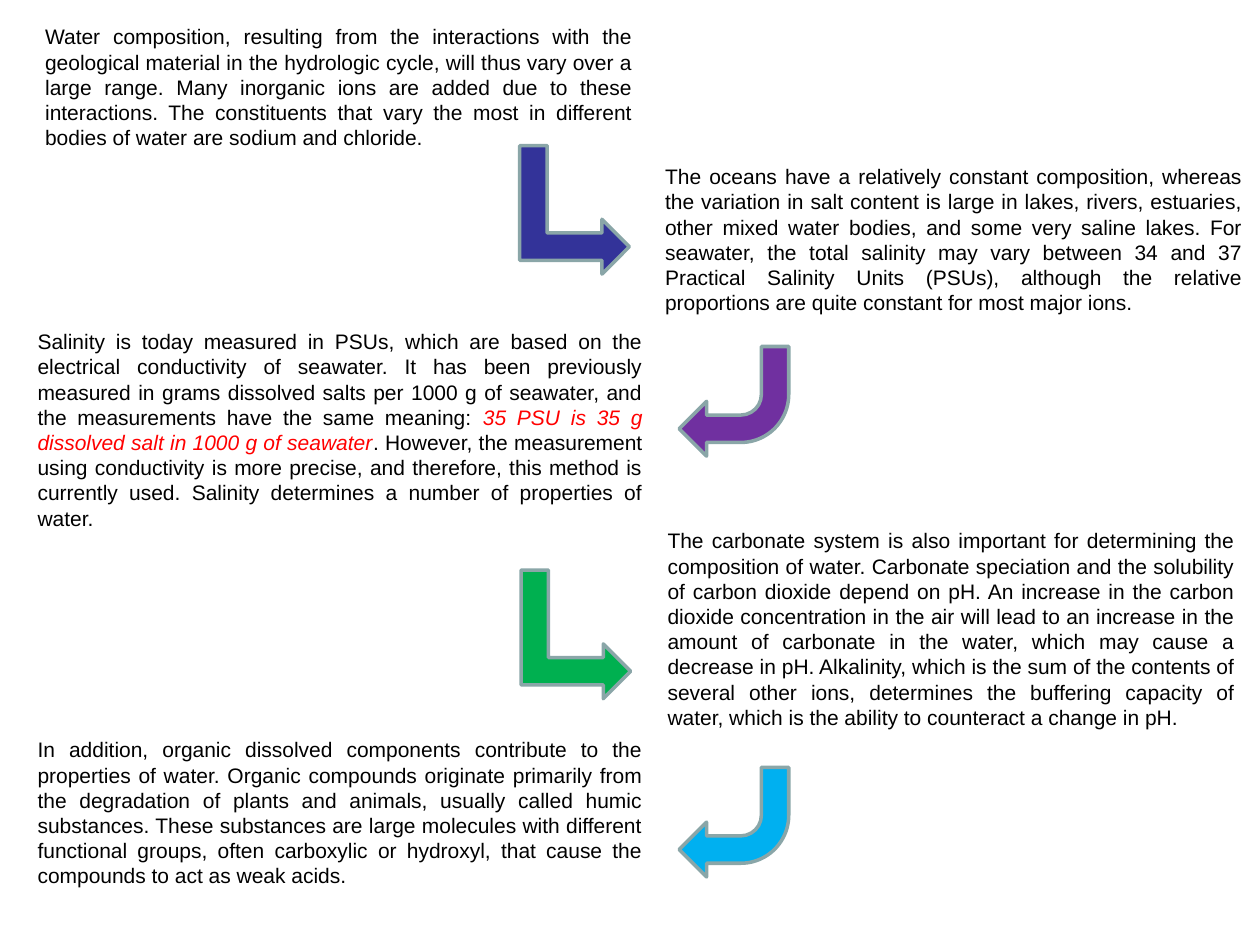
from pptx import Presentation
from pptx import util as u
from pptx.dml.color import RGBColor
from pptx.enum import shapes, text

PX = 9144  # 100 px to the inch

BLACK, RED, OUTLINE = "000000", "FF0000", "8AA6A8"
DOWN_RIGHT = (shapes.MSO_SHAPE.BENT_UP_ARROW, 90)
DOWN_LEFT = (shapes.MSO_SHAPE.BENT_ARROW, 180)

# Box, then the runs of the paragraph; a run in red is emphasised.
PASSAGES = [
    ((26, 14, 486, 111), [
        ("Water composition, resulting from the interactions with the geological "
         "material in the hydrologic cycle, will thus vary over a large range. Many "
         "inorganic ions are added due to these interactions. The constituents that "
         "vary the most in different bodies of water are sodium and chloride. ", BLACK)]),
    ((518, 125, 478, 131), [
        ("The oceans have a relatively constant composition, whereas the variation in "
         "salt content is large in lakes, rivers, estuaries, other mixed water bodies, "
         "and some very saline lakes. For seawater, the total salinity may vary between "
         "34 and 37 Practical Salinity Units (PSUs), although the relative proportions "
         "are quite constant for most major ions. ", BLACK)]),
    ((20, 256, 500, 172), [
        ("Salinity is today measured in PSUs, which are based on the electrical "
         "conductivity of seawater. It has been previously measured in grams dissolved "
         "salts per 1000 g of seawater, and the measurements have the same meaning: ", BLACK),
        ("35 PSU is 35 g dissolved salt in 1000 g of seawater", RED),
        (". However, the measurement using conductivity is more precise, and therefore, "
         "this method is currently used. Salinity determines a number of properties of "
         "water. ", BLACK)]),
    ((520, 414, 470, 172), [
        ("The carbonate system is also important for determining the composition of "
         "water. Carbonate speciation and the solubility of carbon dioxide depend on pH. "
         "An increase in the carbon dioxide concentration in the air will lead to an "
         "increase in the amount of carbonate in the water, which may cause a decrease "
         "in pH. Alkalinity, which is the sum of the contents of several other ions, "
         "determines the buffering capacity of water, which is the ability to counteract "
         "a change in pH. ", BLACK)]),
    ((20, 580, 500, 131), [
        ("In addition, organic dissolved components contribute to the properties of "
         "water. Organic compounds originate primarily from the degradation of plants "
         "and animals, usually called humic substances. These substances are large "
         "molecules with different functional groups, often carboxylic or hydroxyl, that "
         "cause the compounds to act as weak acids.", BLACK)]),
]

ARROWS = [
    ((405, 123, 102, 87), DOWN_RIGHT, "333399"),
    ((539, 275, 87, 87), DOWN_LEFT, "7030A0"),
    ((406, 460, 102, 87), DOWN_RIGHT, "00B050"),
    ((539, 609, 87, 87), DOWN_LEFT, "00B0F0"),
]


def emu(box):
    return [n * PX for n in box]


def color(value):
    return RGBColor.from_string(value)


def add_passage(s, box, runs):
    tf = s.shapes.add_textbox(*emu(box)).text_frame
    tf.word_wrap = True
    tf.auto_size = text.MSO_AUTO_SIZE.SHAPE_TO_FIT_TEXT
    p = tf.paragraphs[0]
    p.alignment = text.PP_ALIGN.JUSTIFY
    for words, ink in runs:
        r = p.add_run()
        r.text = words
        r.font.name = "Arial"
        r.font.size = u.Pt(12)
        r.font.color.rgb = color(ink)
        r.font.italic = ink == RED


def add_arrow(s, box, direction, fill):
    preset, rotation = direction
    sp = s.shapes.add_shape(preset, *emu(box))
    sp.rotation = rotation
    sp.shadow.inherit = False
    sp.fill.solid()
    sp.fill.fore_color.rgb = color(fill)
    sp.line.color.rgb = color(OUTLINE)
    sp.line.width = u.Pt(2)


def main():
    prs = Presentation()
    prs.slide_width, prs.slide_height = emu((1000, 750))
    s = prs.slides.add_slide(prs.slide_layouts[6])
    for passage in PASSAGES:
        add_passage(s, *passage)
    for arrow in ARROWS:
        add_arrow(s, *arrow)
    prs.save("out.pptx")


if __name__ == "__main__":
    main()
